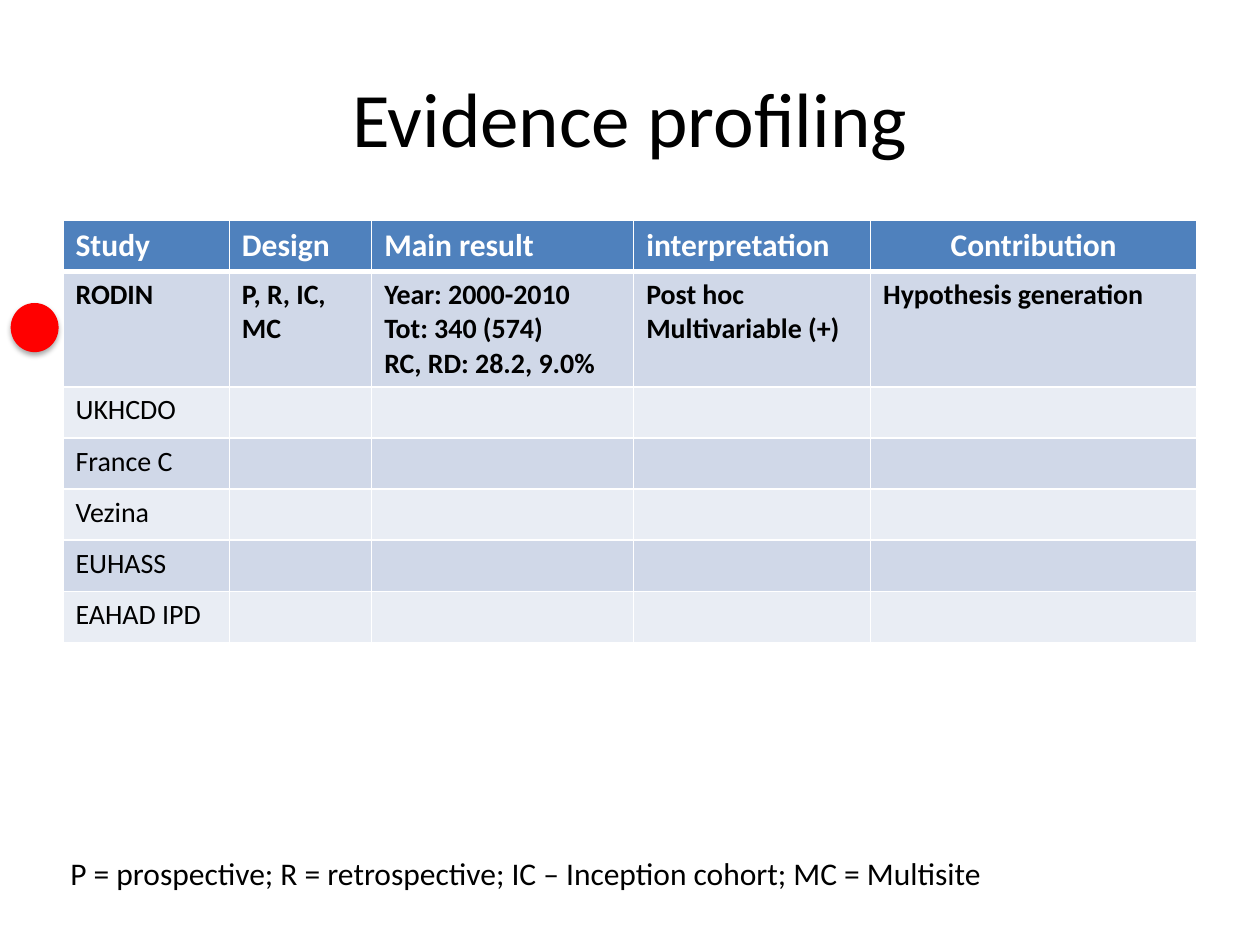
from lxml import etree
from pptx import Presentation
from pptx.dml.color import RGBColor
from pptx.enum.shapes import MSO_SHAPE
from pptx.enum.text import MSO_ANCHOR, MSO_AUTO_SIZE, PP_ALIGN
from pptx.oxml import parse_xml
from pptx.oxml.ns import qn
from pptx.util import Inches, Pt

LEFT, CENTER = PP_ALIGN.LEFT, PP_ALIGN.CENTER
MIDDLE = MSO_ANCHOR.MIDDLE
GROW = MSO_AUTO_SIZE.SHAPE_TO_FIT_TEXT
OVAL = MSO_SHAPE.OVAL

BLACK = RGBColor(0x00, 0x00, 0x00)
WHITE = RGBColor(0xFF, 0xFF, 0xFF)
BLUE = RGBColor(0x4F, 0x81, 0xBD)
BANDS = [RGBColor(0xD0, 0xD8, 0xE8), RGBColor(0xE9, 0xED, 0xF4)]
RED = RGBColor(0xFF, 0x00, 0x00)
FONT = "Calibri"
NS = "http://schemas.openxmlformats.org/drawingml/2006/main"

# Content
TITLE = "Evidence profiling"
HEADS = ["Study", "Design", "Main result", "interpretation", "Contribution"]
RODIN = ["RODIN", "P, R, IC, MC",
         "Year: 2000-2010\nTot: 340 (574)\nRC, RD: 28.2, 9.0%",
         "Post hoc\nMultivariable (+)", "Hypothesis generation"]
OTHERS = ["UKHCDO", "France C", "Vezina", "EUHASS", "EAHAD IPD"]
ROWS = [HEADS, RODIN] + [[name, "", "", "", ""] for name in OTHERS]
WIDTHS = [1.32, 1.13, 2.08, 1.88, 2.59]
KEY = "P = prospective; R = retrospective; IC – Inception cohort; MC = Multisite"


def write(frame, text, size=18, color=BLACK, bold=False, align=LEFT):
    """Fill a text frame, one paragraph per line."""
    frame.text = text
    for para in frame.paragraphs:
        para.alignment = align
        font = para.font
        for run in para.runs:
            font = run.font
            font.name, font.size, font.bold = FONT, Pt(size), bold
            font.color.rgb = color


def border(cell, top, bottom):
    """Draw white lines on the four sides of a cell."""
    props = cell._tc.get_or_add_tcPr()
    sides = [("lnL", 1), ("lnR", 1), ("lnT", top), ("lnB", bottom)]
    for i, (side, width) in enumerate(sides):
        line = etree.Element(qn("a:" + side), w=str(Pt(width)))
        fill = etree.SubElement(line, qn("a:solidFill"))
        etree.SubElement(fill, qn("a:srgbClr"), val=str(WHITE))
        props.insert(i, line)


def main():
    deck = Presentation()
    deck.slide_width, deck.slide_height = Inches(10), Inches(7.5)
    slide = deck.slides.add_slide(deck.slide_layouts[5])
    shapes = slide.shapes

    # Title
    title = shapes.title
    title.left, title.top = Inches(0.5), Inches(0.3)
    title.width, title.height = Inches(9), Inches(1.25)
    title.text_frame.vertical_anchor = MIDDLE
    write(title.text_frame, TITLE, size=44, align=CENTER)

    # Study table
    table = shapes.add_table(len(ROWS), len(HEADS), Inches(0.5), Inches(1.75),
                             Inches(9), Inches(2.84)).table
    for col, width in zip(table.columns, WIDTHS):
        col.width = Inches(width)
    for r, row in enumerate(ROWS):
        head = r == 0
        for c, text in enumerate(row):
            cell = table.cell(r, c)
            write(cell.text_frame, text, size=18 if head else 16,
                  color=WHITE if head else BLACK, bold=r < 2,
                  align=CENTER if head and c == len(HEADS) - 1 else LEFT)
            cell.fill.solid()
            cell.fill.fore_color.rgb = BLUE if head else BANDS[(r - 1) % 2]
            border(cell, top=3 if r == 1 else 1, bottom=3 if head else 1)

    # Red marker with a soft shadow
    dot = shapes.add_shape(OVAL, Inches(0.09), Inches(2.41),
                           Inches(0.37), Inches(0.38))
    dot.fill.solid()
    dot.fill.fore_color.rgb = RED
    dot.line.color.rgb = RED
    dot.line.width = Pt(0.75)
    dot._element.spPr.append(parse_xml(
        f'<a:effectLst xmlns:a="{NS}"><a:outerShdw blurRad="{Pt(3.1)}" '
        f'dist="{Pt(1.8)}" dir="5400000" rotWithShape="0">'
        '<a:srgbClr val="000000"><a:alpha val="35000"/></a:srgbClr>'
        '</a:outerShdw></a:effectLst>'))

    # Key to the design codes
    key = shapes.add_textbox(Inches(0.46), Inches(6.73),
                             Inches(9.04), Inches(0.4)).text_frame
    key.word_wrap = True
    key.auto_size = GROW
    write(key, KEY)

    deck.save("out.pptx")


if __name__ == "__main__":
    main()
